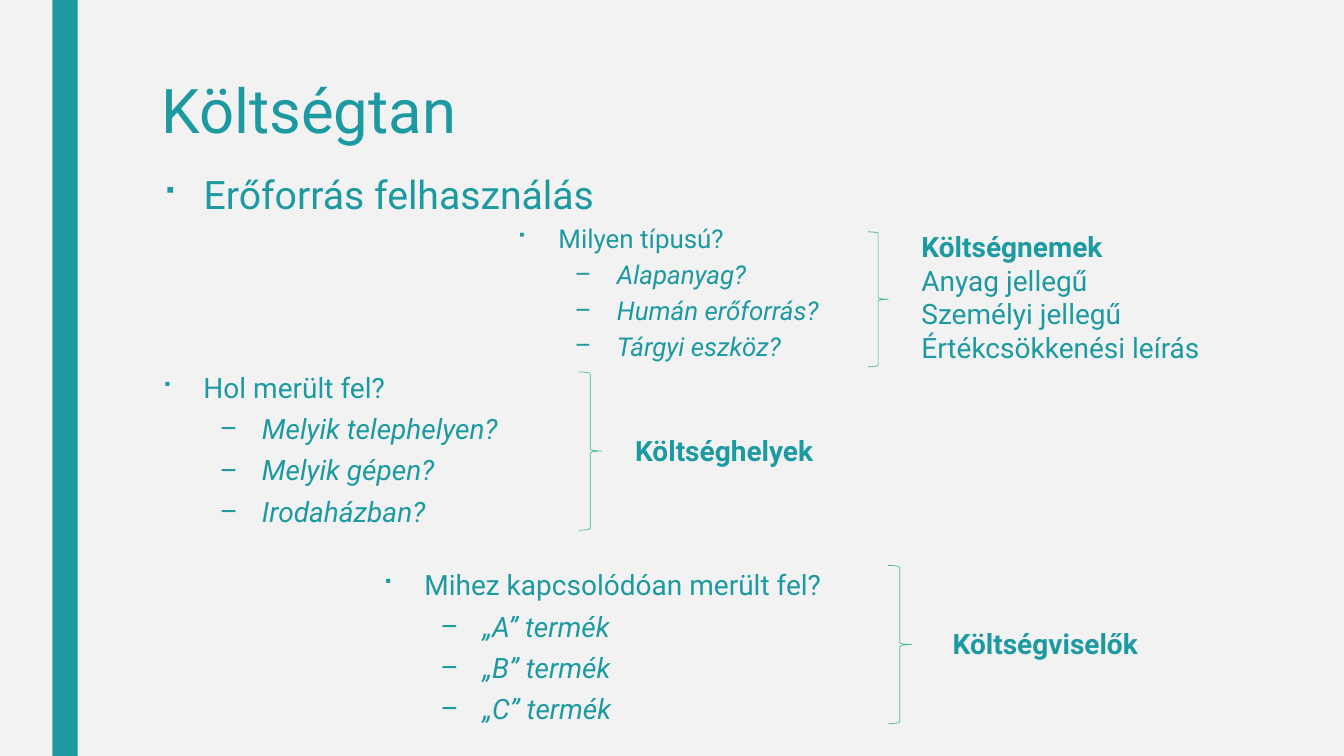
"""Build the cost accounting slide with its question lists and braces."""
from lxml import etree
from pptx import Presentation
from pptx.dml.color import RGBColor
from pptx.enum.shapes import MSO_SHAPE
from pptx.enum.text import MSO_ANCHOR, MSO_AUTO_SIZE, PP_ALIGN
from pptx.oxml.ns import qn
from pptx.util import Inches, Pt

TEAL = RGBColor(0x1D, 0x9A, 0xA1)
GREEN = RGBColor(0x42, 0xBA, 0x97)
PALE = RGBColor(0xF2, 0xF2, 0xF2)
RECT, BRACE = MSO_SHAPE.RECTANGLE, MSO_SHAPE.RIGHT_BRACE
TOP, LEFT = MSO_ANCHOR.TOP, PP_ALIGN.LEFT
NO_FIT, GROW = MSO_AUTO_SIZE.NONE, MSO_AUTO_SIZE.SHAPE_TO_FIT_TEXT


def add_line(p, text, size, **extra):
    r = p.add_run()
    r.text = text
    r.font.color.rgb = TEAL
    for name, value in {"name": "Roboto", "size": Pt(size), **extra}.items():
        setattr(r.font, name, value)


def add_bullet(p, text, size, spacing, level=0):
    values = {"level": level, "alignment": LEFT, "line_spacing": spacing,
              "space_before": Pt(5 if level else 10), "space_after": Pt(2)}
    for name, value in values.items():
        setattr(p, name, value)
    pPr = p._p.get_or_add_pPr()
    pPr.set("marL", str(Inches(1 if level else 0.42)))
    pPr.set("indent", str(Inches(-0.42)))
    etree.SubElement(pPr, qn("a:buFont")).set("typeface", "Roboto" if level else "Wingdings")
    etree.SubElement(pPr, qn("a:buChar")).set("char", "–" if level else "■")
    add_line(p, text, size, italic=bool(level))


prs = Presentation()
prs.slide_width, prs.slide_height = Inches(13.33), Inches(7.5)
s = prs.slides.add_slide(prs.slide_layouts[1])
s.background.fill.solid()
s.background.fill.fore_color.rgb = PALE

sp = s.shapes.add_shape(RECT, Inches(0.52), 0, Inches(0.25), Inches(7.5))
sp.shadow.inherit = False
sp.fill.solid()
sp.fill.fore_color.rgb = TEAL
sp.line.fill.background()

title, body = s.shapes.title, s.placeholders[1]
for sp, top, height in [(title, 0.75, 1.62), (body, 1.68, 3.92)]:
    sp.left, sp.top, sp.width, sp.height = map(Inches, (1.5, top, 10.5, height))
    tf = sp.text_frame
    tf.auto_size, tf.vertical_anchor = NO_FIT, TOP

p = title.text_frame.paragraphs[0]
p.alignment, p.line_spacing = LEFT, 0.89
add_line(p, "Költségtan", 44)
add_bullet(body.text_frame.paragraphs[0], "Erőforrás felhasználás", 28, 0.94)

questions = [
    ((5.02, 2.21, 4.09, 1.47), 18.5, 0.84,
     ["Milyen típusú?", "Alapanyag?", "Humán erőforrás?", "Tárgyi eszköz?"]),
    ((1.5, 3.65, 3.96, 1.81), 20, 0.94,
     ["Hol merült fel?", "Melyik telephelyen?", "Melyik gépen?", "Irodaházban?"]),
    ((3.69, 5.61, 6.61, 1.81), 20, 0.94,
     ["Mihez kapcsolódóan merült fel?", "„A” termék", "„B” termék", "„C” termék"]),
]
for box, size, spacing, lines in questions:
    tf = s.shapes.add_textbox(*map(Inches, box)).text_frame
    tf.word_wrap = True
    for i, text in enumerate(lines):
        p = tf.add_paragraph() if i else tf.paragraphs[0]
        add_bullet(p, text, size, spacing, level=min(i, 1))

answers = [
    ((8.61, 2.3, 0.2, 1.34), (9.04, 2.23, 3.19, 1.45),
     ["Költségnemek", "Anyag jellegű", "Személyi jellegű", "Értékcsökkenési leírás"]),
    ((5.74, 3.69, 0.23, 1.57), (6.2, 4.25, 2.18, 0.44), ["Költséghelyek"]),
    ((8.81, 5.61, 0.23, 1.57), (9.35, 6.17, 2.24, 0.44), ["Költségviselők"]),
]
for brace, box, lines in answers:
    sp = s.shapes.add_shape(BRACE, *map(Inches, brace))
    sp.shadow.inherit = False
    sp.fill.background()
    sp.line.color.rgb = GREEN
    sp.line.width = Pt(0.5)
    tf = s.shapes.add_textbox(*map(Inches, box)).text_frame
    tf.word_wrap, tf.auto_size = False, GROW
    for i, text in enumerate(lines):
        p = tf.add_paragraph() if i else tf.paragraphs[0]
        add_line(p, text, 20, bold=i == 0)

prs.save("out.pptx")
